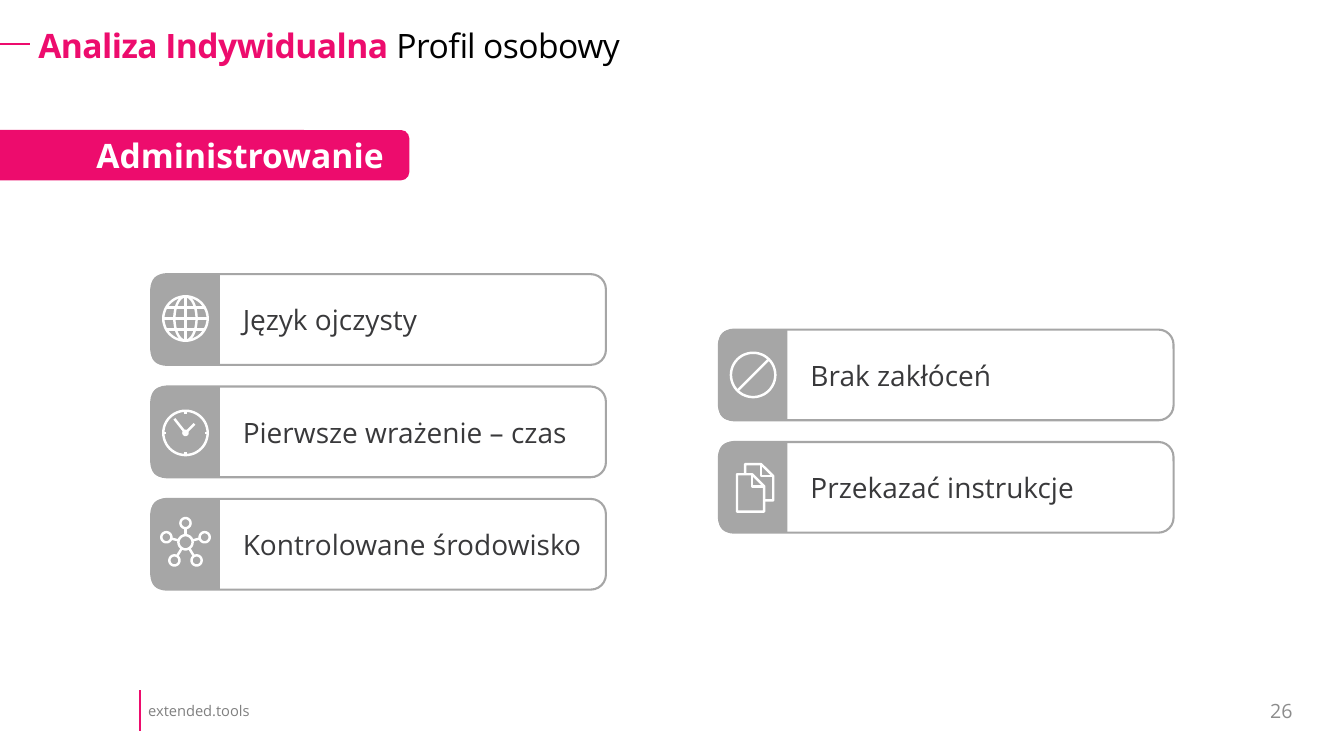
import math

import pptx
import pptx.dml.color
import pptx.enum.shapes
import pptx.enum.text
import pptx.oxml.ns
import pptx.util
from lxml import etree

Inches, Pt = pptx.util.Inches, pptx.util.Pt
SHAPE = pptx.enum.shapes.MSO_SHAPE
ALIGN = pptx.enum.text.PP_ALIGN
ANCHOR = pptx.enum.text.MSO_ANCHOR

FONT = "Open Sans"
PINK, GREY, WHITE, INK = "ED0C6D", "A6A6A6", "FFFFFF", "39393B"
CARD_W, CARD_H, PITCH = 4.51, 0.9, 1.115
TAB_W, TEXT_X = 0.68, 0.81
RING = 0.22


def rgb(value):
    return pptx.dml.color.RGBColor.from_string(value)


def paint(sp, fill=None, line=None, width=1.5):
    sp.shadow.inherit = False
    if fill:
        sp.fill.solid()
        sp.fill.fore_color.rgb = rgb(fill)
    else:
        sp.fill.background()
    if line:
        sp.line.color.rgb = rgb(line)
        sp.line.width = Pt(width)
    else:
        sp.line.fill.background()


def add_run(p, text, size, color, bold=False):
    r = p.add_run()
    r.text = text
    r.font.name, r.font.size, r.font.bold = FONT, Pt(size), bold
    r.font.color.rgb = rgb(color)
    return r


def add_label(s, box, text, size, color, align=ALIGN.LEFT, inset=0.1):
    """Single line of text, centred vertically in its box."""
    tf = s.shapes.add_textbox(*map(Inches, box)).text_frame
    tf.word_wrap = True
    tf.vertical_anchor = ANCHOR.MIDDLE
    tf.margin_left = tf.margin_right = Inches(inset)
    p = tf.paragraphs[0]
    p.alignment = align
    add_run(p, text, size, color)


def add_rule(s, x1, y1, x2, y2):
    c = s.shapes.add_connector(pptx.enum.shapes.MSO_CONNECTOR.STRAIGHT,
                               *map(Inches, (x1, y1, x2, y2)))
    c.line.color.rgb = rgb(PINK)
    c.line.width = Pt(1.5)
    sp_pr = c._element.find(pptx.oxml.ns.qn("p:spPr"))
    etree.SubElement(sp_pr, pptx.oxml.ns.qn("a:effectLst"))


# Icons are lists of strokes: points in inches around the icon's centre.

def ellipse(rx, ry, cx=0, cy=0, steps=48):
    turns = [2 * math.pi * i / steps for i in range(steps + 1)]
    return [(cx + rx * math.cos(t), cy + ry * math.sin(t)) for t in turns]


def globe():
    lines = [ellipse(RING, RING), ellipse(RING / 2, RING), [(0, -RING), (0, RING)]]
    for y in (-0.11, 0, 0.11):
        half = math.sqrt(RING ** 2 - y ** 2)
        lines.append([(-half, y), (half, y)])
    return lines


def clock():
    ticks = [[(RING * x, RING * y), (0.19 * x, 0.19 * y)]
             for x, y in ((0, -1), (1, 0), (0, 1), (-1, 0))]
    hands = [(-0.11, -0.14), (0, 0), (0.09, -0.09)]
    return [ellipse(RING, RING), ellipse(0.02, 0.02), hands] + ticks


def network():
    hub, node = 0.07, 0.05
    lines = [ellipse(hub, hub)]
    for x, y in ((0, -0.19), (0.19, -0.05), (0.11, 0.18), (-0.11, 0.18), (-0.19, -0.05)):
        reach = math.hypot(x, y)
        lines.append(ellipse(node, node, x, y))
        lines.append([(x * k, y * k) for k in (hub / reach, 1 - node / reach)])
    return lines


def no_entry():
    d = RING * math.sqrt(0.5)
    return [ellipse(RING, RING), [(-d, d), (d, -d)]]


def documents():
    front = [(-0.18, -0.13), (-0.03, -0.13), (0.09, -0.01), (0.09, 0.24),
             (-0.18, 0.24), (-0.18, -0.13)]
    back = [(-0.1, -0.13), (-0.1, -0.23), (0.06, -0.23), (0.18, -0.11),
            (0.18, 0.13), (0.09, 0.13)]
    folds = [[(-0.03, -0.13), (-0.03, -0.01), (0.09, -0.01)],
             [(0.06, -0.23), (0.06, -0.11), (0.18, -0.11)]]
    return [front, back] + folds


def add_icon(s, cx, cy, strokes):
    placed = [[(Inches(cx + x), Inches(cy + y)) for x, y in line] for line in strokes]
    builder = s.shapes.build_freeform(*placed[0][0], scale=1.0)
    for line in placed:
        builder.move_to(*line[0])
        builder.add_line_segments(line[1:], close=line[0] == line[-1])
    paint(builder.convert_to_shape(), line=WHITE, width=1.75)


def add_card(s, x, y, text, icon, icon_dx=0, icon_dy=0):
    frame = s.shapes.add_shape(SHAPE.ROUNDED_RECTANGLE,
                               *map(Inches, (x, y, CARD_W, CARD_H)))
    paint(frame, line=GREY)
    cx, cy = x + TAB_W / 2, y + CARD_H / 2
    tab = s.shapes.add_shape(SHAPE.ROUND_2_SAME_RECTANGLE, *map(
        Inches, (cx - CARD_H / 2, cy - TAB_W / 2, CARD_H, TAB_W)))
    tab.rotation = 270
    paint(tab, GREY)
    add_icon(s, cx + icon_dx, cy + icon_dy, icon())
    add_label(s, (x + TEXT_X, y, CARD_W - TEXT_X, CARD_H), text, 20, INK)


def add_column(s, x, y, cards):
    for i, card in enumerate(cards):
        add_card(s, x, y + i * PITCH, *card)


def add_heading(s, x, y, w, h):
    add_rule(s, 0, y + 0.19, x, y + 0.19)
    title = s.shapes.title
    title.left, title.top, title.width, title.height = map(Inches, (x, y, w, h))
    tf = title.text_frame
    tf.word_wrap = True
    tf.auto_size = pptx.enum.text.MSO_AUTO_SIZE.NONE
    tf.vertical_anchor = ANCHOR.TOP
    tf.margin_left = tf.margin_right = Inches(0.08)
    tf.margin_top = tf.margin_bottom = Inches(0.04)
    p = tf.paragraphs[0]
    p.alignment = ALIGN.LEFT
    p.line_spacing = 0.9
    for text, color, bold in (("Analiza Indywidualna ", PINK, True),
                              ("Profil osobowy", "000000", False)):
        r = add_run(p, text, 24, color, bold)
        r.font._element.set("spc", "-40")


def add_banner(s, x, y, w, h, text):
    sp = s.shapes.add_shape(SHAPE.ROUNDED_RECTANGLE, *map(Inches, (x, y, w, h)))
    paint(sp, PINK)
    tf = sp.text_frame
    tf.vertical_anchor = ANCHOR.MIDDLE
    tf.margin_right = Inches(0.23)
    p = tf.paragraphs[0]
    p.alignment = ALIGN.RIGHT
    add_run(p, text, 24, WHITE, True)


def add_footer(s, y, h):
    add_rule(s, 1.39, y, 1.39, y + h)
    add_label(s, (1.34, y, 1.72, h), "extended.tools", 10.5, "808080", inset=0.13)
    add_label(s, (11.66, y, 1.26, h), "26", 14, "8C8C8C", ALIGN.RIGHT)


def main():
    prs = pptx.Presentation()
    prs.slide_width, prs.slide_height = Inches(13.33), Inches(7.5)
    s = prs.slides.add_slide(prs.slide_layouts[5])
    add_heading(s, 0.3, 0.25, 12.63, 0.45)
    add_banner(s, -0.71, 1.29, 4.77, 0.5, "Administrowanie")
    add_column(s, 1.5, 2.72, [
        ("Język ojczysty", globe, 0, -0.01),
        ("Pierwsze wrażenie – czas", clock, 0, 0.01),
        ("Kontrolowane środowisko", network, 0, -0.02)])
    add_column(s, 7.13, 3.27, [
        ("Brak zakłóceń", no_entry),
        ("Przekazać instrukcje", documents, 0.02)])
    add_footer(s, 6.85, 0.4)
    prs.save("out.pptx")


if __name__ == "__main__":
    main()
